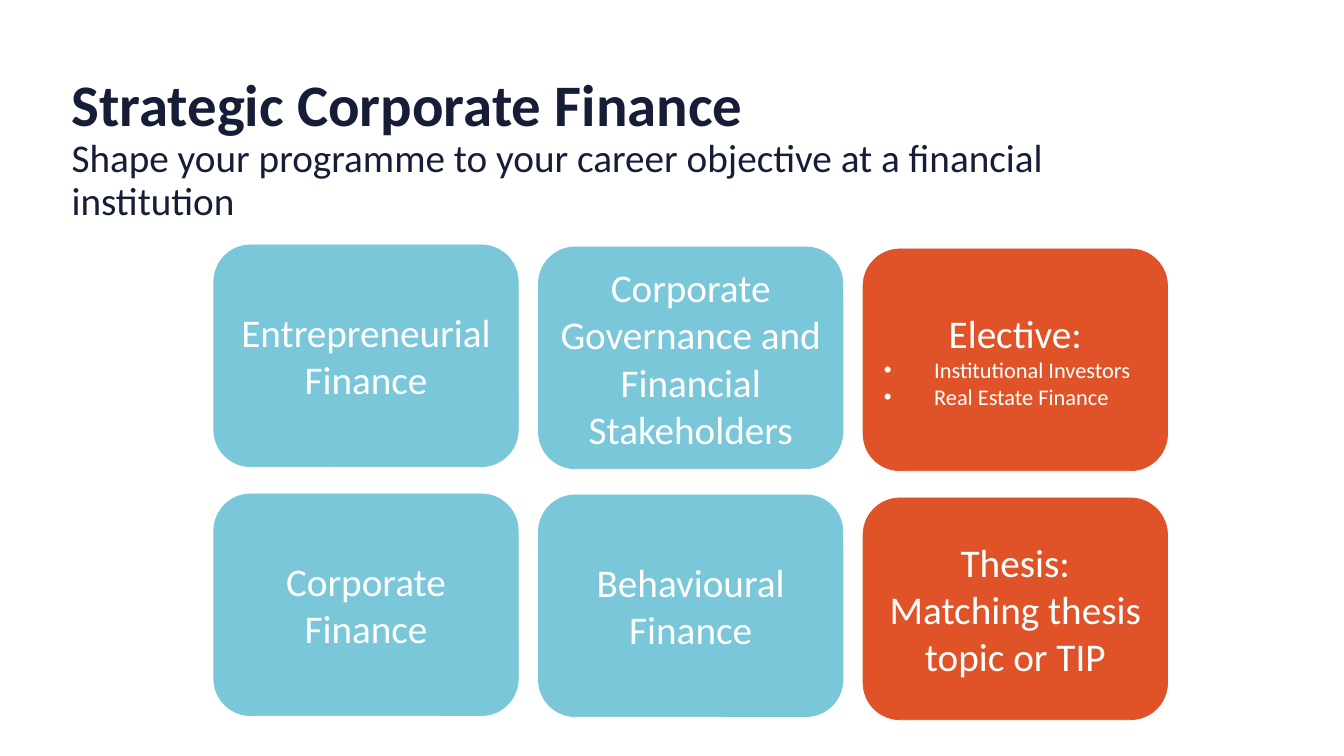
from lxml import etree
from pptx import Presentation
from pptx.dml.color import RGBColor
from pptx.enum.shapes import MSO_SHAPE as Shape
from pptx.enum.text import MSO_ANCHOR as Anchor, PP_ALIGN as Align
from pptx.oxml.ns import qn
from pptx.util import Inches, Pt

FONT = "Calibri"
NAVY, BLUE, ORANGE, WHITE = "151D37", "79C7D9", "E05329", "FFFFFF"

HEADING = [
    ("Strategic Corporate Finance", 42, True),
    ("Shape your programme to your career objective at a financial", 28, False),
    ("institution", 28, False),
]
# Each column: fill colour, tops of its cards, cards as (centred lines, bullets)
COLUMNS = [
    (BLUE, (2.43, 4.9), [
        (["Entrepreneurial Finance"], []),
        (["Corporate Finance"], []),
    ]),
    (BLUE, (2.45, 4.91), [
        (["Corporate Governance and Financial Stakeholders"], []),
        (["Behavioural Finance"], []),
    ]),
    (ORANGE, (2.47, 4.94), [
        (["Elective:"], ["Institutional Investors", "Real Estate Finance"]),
        (["Thesis:", "Matching thesis topic or TIP"], []),
    ]),
]
CARD_LEFT, CARD_STEP = 2.12, 3.22
CARD_WIDTH, CARD_HEIGHT = 3.02, 2.2
BULLET_INDENT = 0.5


def color(value):
    return RGBColor.from_string(value)


def add_bullet(para):
    """Give the paragraph a round bullet with a hanging indent."""
    props = para._p.get_or_add_pPr()
    props.set("marL", str(Inches(BULLET_INDENT)))
    props.set("indent", str(-Inches(BULLET_INDENT)))
    etree.SubElement(props, qn("a:buFont")).set("typeface", "Arial")
    etree.SubElement(props, qn("a:buChar")).set("char", "•")


def write(frame, text, size=28, ink=WHITE, bold=False, align=Align.LEFT,
          spacing=None, bullet=False):
    """Write one paragraph, using the empty first one if it is free."""
    first = frame.paragraphs[0]
    para = frame.add_paragraph() if first.runs else first
    para.alignment = align
    if spacing:
        para.line_spacing = spacing
    if bullet:
        add_bullet(para)
    span = para.add_run()
    span.text = text
    span.font.name = FONT
    span.font.size = Pt(size)
    span.font.bold = bold
    span.font.color.rgb = color(ink)


def add_card(page, left, top, fill, lines, bullets):
    card = page.shapes.add_shape(Shape.ROUNDED_RECTANGLE, Inches(left), Inches(top),
                                 Inches(CARD_WIDTH), Inches(CARD_HEIGHT))
    card.shadow.inherit = False
    card.fill.solid()
    card.fill.fore_color.rgb = color(fill)
    card.line.color.rgb = color(fill)
    card.line.width = Pt(0.5)
    frame = card.text_frame
    frame.word_wrap = True
    frame.vertical_anchor = Anchor.MIDDLE
    for line in lines:
        write(frame, line, align=Align.CENTER)
    for item in bullets:
        write(frame, item, size=16, bullet=True)


def add_heading(page):
    box = page.shapes.add_textbox(Inches(0.71), Inches(0.75), Inches(12.17), Inches(0.62))
    frame = box.text_frame
    frame.word_wrap = True
    frame.margin_left = frame.margin_right = frame.margin_top = frame.margin_bottom = 0
    for text, size, bold in HEADING:
        write(frame, text, size=size, ink=NAVY, bold=bold, spacing=0.9)


def main():
    deck = Presentation()
    deck.slide_width, deck.slide_height = Inches(13.33), Inches(7.5)
    page = deck.slides.add_slide(deck.slide_layouts[6])
    for index, (fill, tops, cards) in enumerate(COLUMNS):
        left = CARD_LEFT + index * CARD_STEP
        for top, (lines, bullets) in zip(tops, cards):
            add_card(page, left, top, fill, lines, bullets)
    add_heading(page)
    deck.save("out.pptx")


if __name__ == "__main__":
    main()
